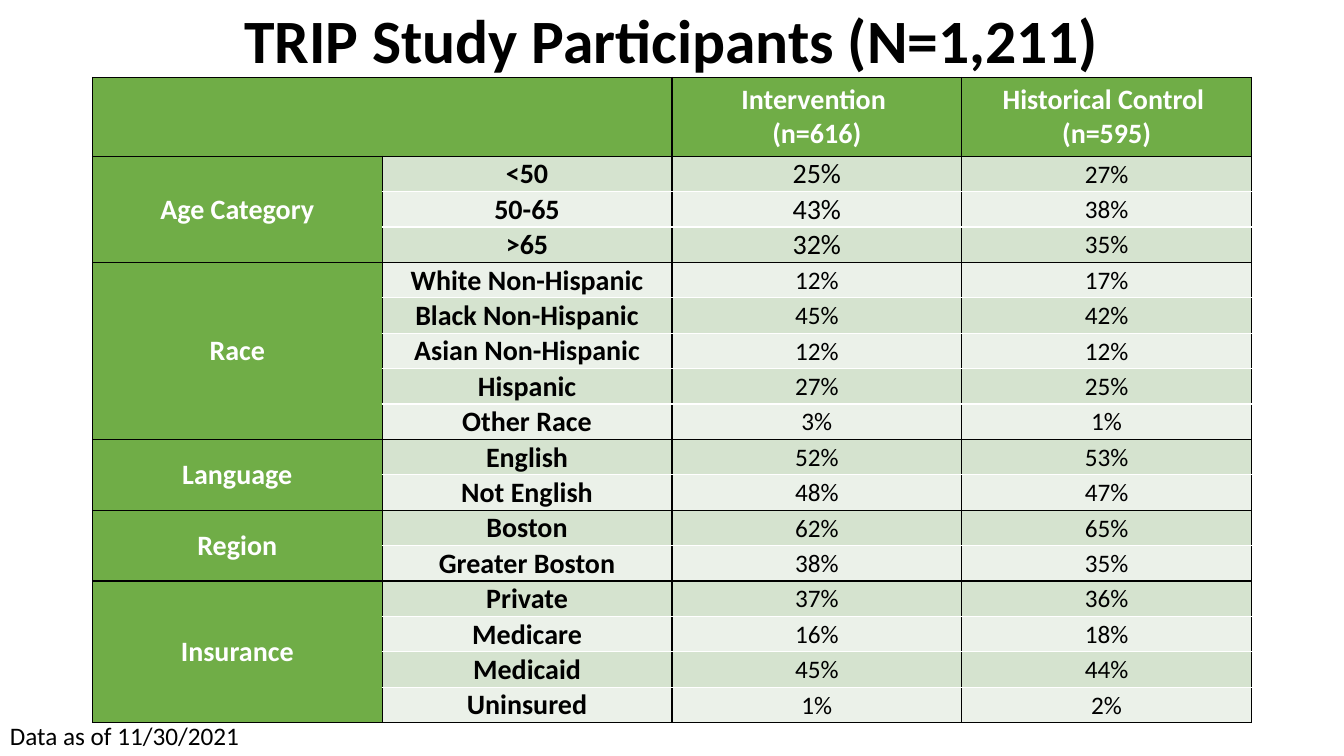
from lxml.etree import SubElement
from pptx import Presentation
from pptx.dml.color import RGBColor
from pptx.enum.text import MSO_ANCHOR, PP_ALIGN
from pptx.oxml.ns import qn
from pptx.util import Pt

BLACK = RGBColor(0, 0, 0)
WHITE = RGBColor(255, 255, 255)
GREEN = RGBColor(0x70, 0xAD, 0x47)
BANDS = RGBColor(0xD5, 0xE3, 0xCF), RGBColor(0xEB, 0xF1, 0xE9)

HEADS = ["Intervention \n(n=616)", "Historical Control \n(n=595)"]
GROUPS = {
    "Age Category": [
        ("<50", "25%", "27%"),
        ("50-65", "43%", "38%"),
        (">65", "32%", "35%"),
    ],
    "Race": [
        ("White Non-Hispanic", "12%", "17%"),
        ("Black Non-Hispanic", "45%", "42%"),
        ("Asian Non-Hispanic", "12%", "12%"),
        ("Hispanic", "27%", "25%"),
        ("Other Race", "3%", "1%"),
    ],
    "Language": [
        ("English", "52%", "53%"),
        ("Not English", "48%", "47%"),
    ],
    "Region": [
        ("Boston", "62%", "65%"),
        ("Greater Boston", "38%", "35%"),
    ],
    "Insurance": [
        ("Private", "37%", "36%"),
        ("Medicare", "16%", "18%"),
        ("Medicaid", "45%", "44%"),
        ("Uninsured", "1%", "2%"),
    ],
}

HEAD = {"size": Pt(20), "bold": True, "color": WHITE}
LABEL = {"size": Pt(20), "bold": True, "color": BLACK}
LARGE = {"size": Pt(20), "bold": False, "color": BLACK}
VALUE = {"size": Pt(18), "bold": False, "color": BLACK}
TITLE = {"size": Pt(44), "bold": True, "color": BLACK}
TIGHT = {"margin_left": Pt(1), "margin_right": Pt(1),
         "margin_top": Pt(0.7), "margin_bottom": Pt(0),
         "vertical_anchor": MSO_ANCHOR.MIDDLE}


def assign(item, values):
    for name, value in values.items():
        setattr(item, name, value)


def write(frame, text, look, align):
    frame.text = text
    for para in frame.paragraphs:
        para.alignment = align
        for run in para.runs:
            run.font.name = "Calibri"
            assign(run.font, {k: v for k, v in look.items() if k != "color"})
            run.font.color.rgb = look["color"]


def paint(cell, fill, top=BLACK, bottom=BLACK):
    """Draw the four borders of a cell, then fill it."""
    props = cell._tc.get_or_add_tcPr()
    sides = {"lnL": BLACK, "lnR": BLACK, "lnT": top, "lnB": bottom}
    for side, color in sides.items():
        line = SubElement(props, qn("a:" + side), w=str(Pt(1)))
        solid = SubElement(line, qn("a:solidFill"))
        SubElement(solid, qn("a:srgbClr"), val=str(color))
    cell.fill.solid()
    cell.fill.fore_color.rgb = fill


def add_text(slide, box, text, look, align, anchor):
    frame = slide.shapes.add_textbox(*map(Pt, box)).text_frame
    frame.word_wrap = True
    frame.vertical_anchor = anchor
    write(frame, text, look, align)
    return frame


def add_head(table):
    for col in range(4):
        paint(table.cell(0, col), GREEN)
    table.cell(0, 0).merge(table.cell(0, 1))
    for col, text in enumerate(HEADS, 2):
        write(table.cell(0, col).text_frame, text, HEAD, PP_ALIGN.CENTER)


def add_group(table, start, name, rows):
    last = start + len(rows) - 1
    for row, texts in enumerate(rows, start):
        side = table.cell(row, 0)
        assign(side, TIGHT)
        paint(side, GREEN)
        looks = LABEL, LARGE if name == "Age Category" else VALUE, VALUE
        for col, (text, look) in enumerate(zip(texts, looks), 1):
            cell = table.cell(row, col)
            assign(cell, TIGHT)
            paint(cell, BANDS[(row - 1) % 2],
                  BLACK if row == start else WHITE,
                  BLACK if row == last else WHITE)
            write(cell.text_frame, text, look, PP_ALIGN.CENTER)
    table.cell(start, 0).merge(table.cell(last, 0))
    write(table.cell(start, 0).text_frame, name, HEAD, PP_ALIGN.CENTER)


def add_grid(slide, left, top, width, height):
    count = 1 + sum(map(len, GROUPS.values()))
    table = slide.shapes.add_table(
        count, 4, Pt(left), Pt(top), Pt(width), Pt(height)).table
    first = 56
    for col in table.columns:
        col.width = Pt(width / 4)
    for row in table.rows:
        row.height = Pt((height - first) / (count - 1))
    table.rows[0].height = Pt(first)
    add_head(table)
    start = 1
    for name, rows in GROUPS.items():
        add_group(table, start, name, rows)
        start += len(rows)


def main():
    deck = Presentation()
    deck.slide_width, deck.slide_height = Pt(960), Pt(540)
    slide = deck.slides.add_slide(deck.slide_layouts[6])
    add_grid(slide, 66, 55.4, 828, 460.8)
    add_text(slide, (0, 511, 433.5, 29), "Data as of 11/30/2021",
             VALUE, PP_ALIGN.LEFT, MSO_ANCHOR.TOP)
    title = add_text(slide, (66, -6, 828, 73.5),
                     "TRIP Study Participants (N=1,211)",
                     TITLE, PP_ALIGN.CENTER, MSO_ANCHOR.MIDDLE)
    title.paragraphs[0].line_spacing = 0.9
    deck.save("out.pptx")


if __name__ == "__main__":
    main()
